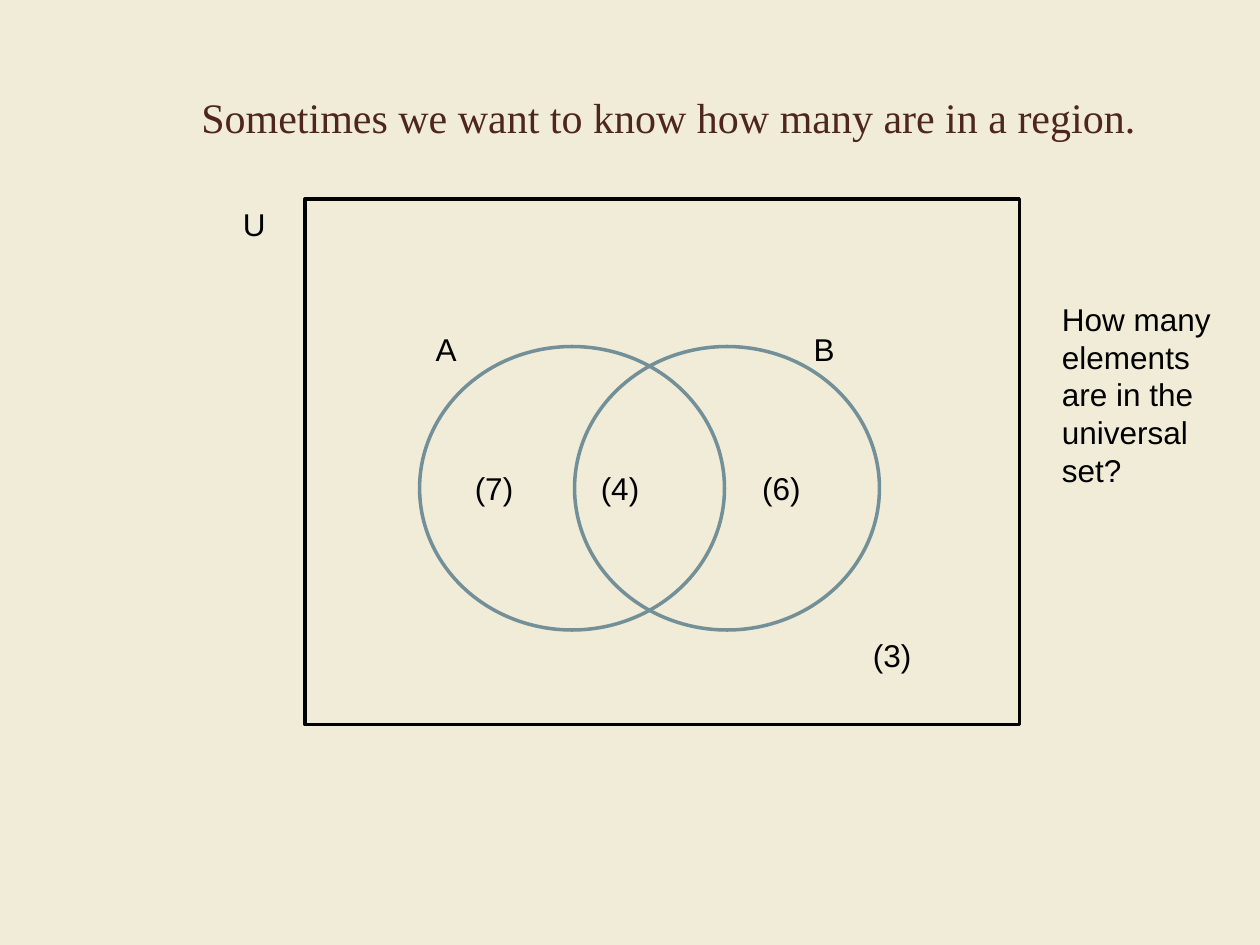
"""Build a slide with a two-set Venn diagram and the element count of each region."""
import pptx
import pptx.dml.color
import pptx.enum.shapes
import pptx.enum.text
import pptx.oxml
import pptx.oxml.ns
import pptx.util
from pptx.util import Inches

COLORS = {"background": "F1ECD8", "title": "4F261E", "ink": "000000", "circle": "738F98"}


def color(name):
    return pptx.dml.color.RGBColor.from_string(COLORS[name])


def add_text(page, text, left, top, width, height, stops=(), size=18, font="Arial", ink="ink"):
    box = page.shapes.add_textbox(Inches(left), Inches(top), Inches(width), Inches(height))
    frame = box.text_frame
    frame.word_wrap = True
    para = frame.paragraphs[0]
    if stops:
        tabs = pptx.oxml.parse_xml(f"<a:tabLst {pptx.oxml.ns.nsdecls('a')}/>")
        for stop in stops:
            tab = tabs.makeelement(pptx.oxml.ns.qn("a:tab"), {"pos": str(Inches(stop)), "algn": "l"})
            tabs.append(tab)
        para._p.get_or_add_pPr().append(tabs)
    span = para.add_run()
    span.text = text
    span.font.size = pptx.util.Pt(size)
    span.font.name = font
    span.font.color.rgb = color(ink)
    return box


deck = pptx.Presentation()
deck.slide_width = Inches(10)
deck.slide_height = Inches(7.5)
page = deck.slides.add_slide(deck.slide_layouts[6])
page.background.fill.solid()
page.background.fill.fore_color.rgb = color("background")

title = add_text(page, "Sometimes we want to know how many are in a region.",
                 1.5, 0.3, 8, 1.25, size=24, font="Times New Roman", ink="title")
title.text_frame.vertical_anchor = pptx.enum.text.MSO_ANCHOR.MIDDLE

kinds = pptx.enum.shapes.MSO_SHAPE
outlines = [
    (kinds.RECTANGLE, 2.42, 1.58, 5.67, 4.17, None, "ink"),
    (kinds.OVAL, 3.33, 2.75, 2.42, 2.25, "background", "circle"),
    (kinds.OVAL, 4.56, 2.75, 2.42, 2.25, None, "circle"),
]
for kind, left, top, width, height, fill, line in outlines:
    shape = page.shapes.add_shape(kind, Inches(left), Inches(top), Inches(width), Inches(height))
    shape.shadow.inherit = False
    if fill:
        shape.fill.solid()
        shape.fill.fore_color.rgb = color(fill)
    else:
        shape.fill.background()
    shape.line.color.rgb = color(line)
    shape.line.width = pptx.util.Pt(2)

labels = [
    ("U", 1.83, 1.58, 0.58, 0.4, ()),
    ("A\tB", 3.36, 2.57, 3.67, 0.4, (3,)),
    ("(7)\t(4)\t(6)", 3.67, 3.67, 2.83, 0.4, (1, 2.28)),
    ("(3)", 6.83, 5, 0.58, 0.4, ()),
    ("How many elements are in the universal set?", 8.33, 2.33, 1.42, 1.62, ()),
]
for label in labels:
    box = add_text(page, *label)
    box.text_frame.auto_size = pptx.enum.text.MSO_AUTO_SIZE.SHAPE_TO_FIT_TEXT

deck.save("out.pptx")
